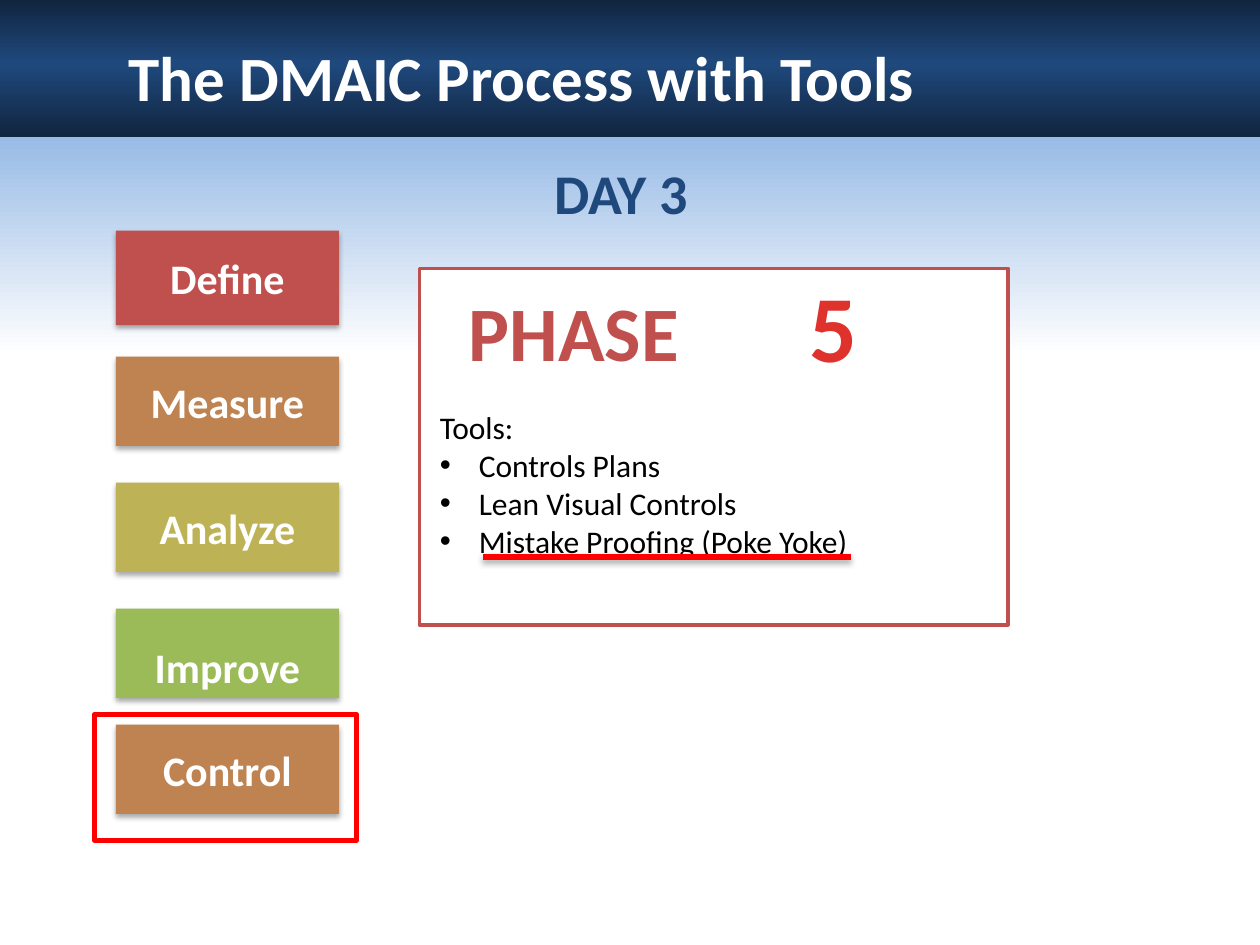
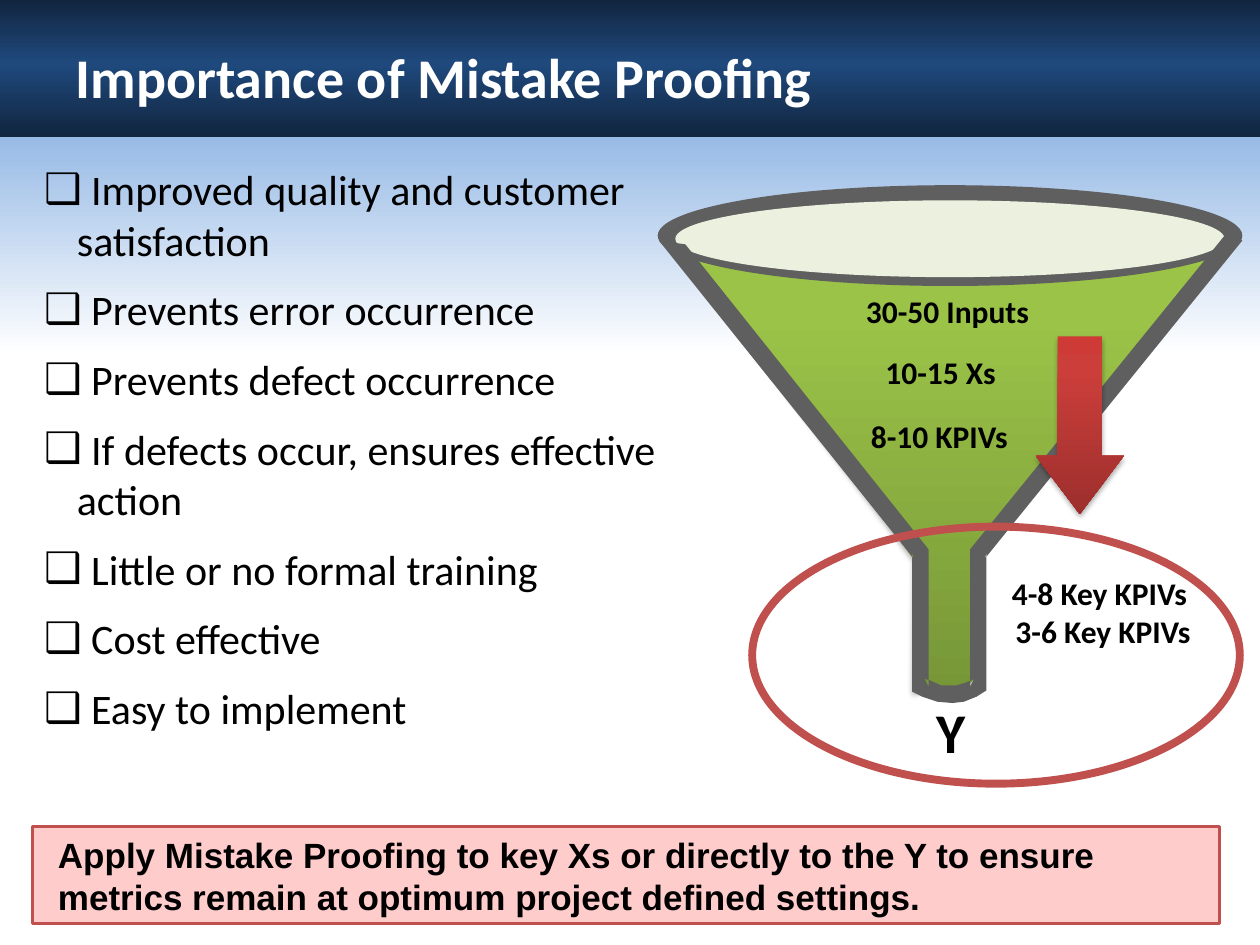
"""Builds two training slides on the DMAIC process and mistake proofing."""
from dataclasses import dataclass

from lxml import etree
from pptx import Presentation
from pptx.dml.color import RGBColor
from pptx.enum.shapes import MSO_CONNECTOR, MSO_SHAPE
from pptx.enum.text import MSO_ANCHOR, MSO_AUTO_SIZE, PP_ALIGN
from pptx.oxml.ns import qn
from pptx.util import Pt

PX = 9144
RECTANGLE, OVAL, DOWN_ARROW = MSO_SHAPE.RECTANGLE, MSO_SHAPE.OVAL, MSO_SHAPE.DOWN_ARROW
STRAIGHT = MSO_CONNECTOR.STRAIGHT
TOP, MIDDLE, BOTTOM = MSO_ANCHOR.TOP, MSO_ANCHOR.MIDDLE, MSO_ANCHOR.BOTTOM
LEFT, CENTER = PP_ALIGN.LEFT, PP_ALIGN.CENTER
NO_FIT = MSO_AUTO_SIZE.NONE
TITLE_AND_CONTENT = 1


@dataclass(frozen=True)
class Theme:
    font: str = "Calibri"
    callout_font: str = "Arial"
    white: str = "FFFFFF"
    black: str = "000000"
    navy: str = "1F497D"
    brick: str = "C0504D"
    bronze: str = "BE8351"
    olive: str = "BDB255"
    green: str = "9BBB59"
    marker: str = "FF0000"
    phase_number: str = "E0322D"
    callout: str = "FFCCCC"
    funnel_wall: str = "5F5F5F"
    funnel_mouth: str = "EBF1DE"
    sky: tuple = ((0, "8EB4E3"), (29, "FFFFFF"), (100, "FFFFFF"))
    band: tuple = ((0, "11253F"), (46, "1F497D"), (100, "11253F"))
    funnel: tuple = ((0, "9DC746"), (20, "9BC348"), (100, "779737"))
    arrow: tuple = ((0, "CE3B37"), (20, "CB3E3A"), (100, "9C2F2D"))
    title: int = 36
    heading: int = 32
    step: int = 24
    statement: int = 20
    label: int = 18
    phase: int = 44
    number: int = 54


class Painter:
    def __init__(self, deck, theme):
        self.deck = deck
        self.theme = theme
        self.page = None

    def new_page(self):
        layout = self.deck.slide_layouts[TITLE_AND_CONTENT]
        self.page = self.deck.slides.add_slide(layout)
        self.shape(RECTANGLE, (0, 92, 1000, 654), fill=self.theme.sky)
        self.shape(RECTANGLE, (0, 0, 1000, 109), fill=self.theme.band)

    def paint(self, shape, fill=None, line=None, width=1, shadow=False):
        if isinstance(fill, tuple):
            shape.fill.gradient()
            shape.fill.gradient_angle = 270
            stops = shape.element.spPr.find(qn("a:gradFill")).find(qn("a:gsLst"))
            for stop in list(stops):
                stops.remove(stop)
            for percent, color in fill:
                stop = etree.SubElement(stops, qn("a:gs"), pos=str(percent * 1000))
                etree.SubElement(stop, qn("a:srgbClr"), val=color)
        elif fill:
            shape.fill.solid()
            shape.fill.fore_color.rgb = RGBColor.from_string(fill)
        else:
            shape.fill.background()
        if line:
            self.stroke(shape, line, width)
        else:
            shape.line.fill.background()
        shape.shadow.inherit = False
        if shadow:
            self.drop_shadow(shape.element.spPr.find(qn("a:effectLst")))
        return shape

    def stroke(self, shape, color, width):
        shape.line.color.rgb = RGBColor.from_string(color)
        shape.line.width = Pt(width)

    def drop_shadow(self, effects):
        shadow = etree.SubElement(effects, qn("a:outerShdw"), blurRad="40000",
                                  dist="23000", dir="5400000", rotWithShape="0")
        color = etree.SubElement(shadow, qn("a:srgbClr"), val=self.theme.black)
        etree.SubElement(color, qn("a:alpha"), val="35000")

    def shape(self, kind, box, **style):
        shape = self.page.shapes.add_shape(kind, *(value * PX for value in box))
        return self.paint(shape, **style)

    def outline(self, points, **style):
        builder = self.page.shapes.build_freeform(*points[0], scale=PX)
        builder.add_line_segments(points[1:], close=True)
        return self.paint(builder.convert_to_shape(), **style)

    def line(self, start, end, color, width):
        ends = (value * PX for value in (*start, *end))
        connector = self.page.shapes.add_connector(STRAIGHT, *ends)
        self.stroke(connector, color, width)
        self.drop_shadow(etree.SubElement(connector.element.spPr, qn("a:effectLst")))

    def letter(self, shape, text, size, color, bold=True, align=CENTER, anchor=TOP,
               font=None, insets=(10, 5, 10, 5)):
        frame = shape.text_frame
        frame.text = text
        frame.word_wrap = True
        frame.auto_size = NO_FIT
        frame.vertical_anchor = anchor
        (frame.margin_left, frame.margin_top,
         frame.margin_right, frame.margin_bottom) = (value * PX for value in insets)
        for para in frame.paragraphs:
            para.alignment = align
            for span in para.runs:
                span.font.name = font or self.theme.font
                span.font.size = Pt(size)
                span.font.bold = bold
                span.font.color.rgb = RGBColor.from_string(color)
        return frame

    def label(self, text, box, size, color=None, align=CENTER):
        shape = self.page.shapes.add_textbox(*(value * PX for value in box))
        self.letter(shape, text, size, color or self.theme.black, align=align)

    def place(self, holder, box):
        holder.left, holder.top, holder.width, holder.height = (v * PX for v in box)
        self.page.shapes.element.append(holder.element)
        return holder

    def title(self, text, box, size):
        holder = self.place(self.page.shapes.title, box)
        self.letter(holder, text, size, self.theme.white, align=LEFT, anchor=BOTTOM)

    def bullets(self, items, box, size, mark, indent, gap=0, lead=None):
        holder = self.place(self.page.placeholders[1], box)
        lines = ([lead] if lead else []) + items
        frame = self.letter(holder, "\n".join(lines), size, self.theme.black,
                            bold=False, align=LEFT)
        for index, para in enumerate(frame.paragraphs):
            para.space_before = Pt(gap)
            bulleted = index > 0 or not lead
            step = indent * PX if bulleted else 0
            properties = para._p.get_or_add_pPr()
            properties.set("marL", str(step))
            properties.set("indent", str(-step))
            if bulleted:
                etree.SubElement(properties, qn("a:buChar"), char=mark)
            else:
                etree.SubElement(properties, qn("a:buNone"))


def draw_process(painter):
    theme = painter.theme
    painter.new_page()
    steps = [
        ("Define", 183, 75, theme.brick, 0),
        ("Measure", 283, 71, theme.bronze, 0),
        ("Analyze", 383, 71, theme.olive, 0),
        ("Improve", 483, 71, theme.green, 11),
        ("Control", 575, 71, theme.bronze, 0),
    ]
    for name, top, height, color, drop in steps:
        step = painter.shape(RECTANGLE, (92, top, 177, height), fill=color, shadow=True)
        painter.letter(step, name, theme.step, theme.white, anchor=MIDDLE,
                       insets=(23, 13 + drop, 23, 13 - drop))

    painter.shape(RECTANGLE, (333, 213, 467, 283), fill=theme.white,
                  line=theme.brick, width=2)
    painter.label("5", (630, 208, 63, 101), theme.number, theme.phase_number)
    painter.label("PHASE", (339, 221, 233, 84), theme.phase, theme.brick)
    painter.bullets(["Controls Plans", "Lean Visual Controls",
                     "Mistake Proofing (Poke Yoke)"],
                    (339, 319, 452, 222), theme.label, "•", 31, lead="Tools:")
    painter.title("The DMAIC Process with Tools", (92, 25, 850, 71), theme.title)
    painter.label("DAY 3", (430, 121, 147, 64), theme.heading, theme.navy, LEFT)
    painter.shape(RECTANGLE, (75, 567, 208, 100), line=theme.marker, width=3)
    painter.line((383, 442), (675, 442), theme.marker, 3)


def draw_funnel(painter):
    theme = painter.theme
    body = [(570, 183), (538, 198), (725, 443), (724, 549), (737, 545), (762, 549),
            (773, 539), (777, 429), (962, 207), (965, 195), (938, 174)]
    wall = [(523, 191), (725, 443), (724, 438), (724, 549), (732, 553), (744, 557),
            (756, 558), (765, 557), (775, 553), (783, 548), (783, 438), (782, 443),
            (986, 191), (976, 182), (770, 436), (770, 545), (773, 539), (766, 542),
            (759, 544), (747, 544), (738, 540), (734, 539), (737, 545), (737, 436),
            (544, 194)]
    painter.outline(body, fill=theme.funnel, shadow=True)
    painter.shape(OVAL, (522, 147, 464, 80), fill=theme.funnel_wall)
    painter.shape(OVAL, (536, 159, 436, 61), fill=theme.funnel_mouth)
    painter.outline(wall, fill=theme.funnel_wall)
    labels = [
        ("30-50 Inputs", (600, 227, 304, 40), theme.label),
        ("10-15 Xs", (642, 275, 209, 40), theme.label),
        ("8-10 KPIVs", (654, 326, 183, 40), theme.label),
        ("4-8 Key KPIVs \n3-6 Key KPIVs", (752, 451, 247, 70), theme.label),
        ("Y", (725, 549, 59, 64), theme.heading),
    ]
    for text, box, size in labels:
        painter.label(text, box, size)
    painter.shape(OVAL, (597, 418, 387, 204), line=theme.brick, width=4.5)
    arrow = painter.shape(DOWN_ARROW, (822, 267, 70, 141), fill=theme.arrow, shadow=True)
    arrow.adjustments[1] = 0.66


def draw_importance(painter):
    theme = painter.theme
    painter.new_page()
    painter.title("Importance of Mistake Proofing", (50, 28, 900, 64), theme.heading)
    painter.bullets([" Improved quality and customer satisfaction",
                     " Prevents error occurrence",
                     " Prevents defect occurrence",
                     " If defects occur, ensures effective action",
                     " Little or no formal training",
                     " Cost effective",
                     " Easy to implement"],
                    (25, 125, 592, 488), theme.step, "❑", 26, gap=11)
    callout = painter.shape(RECTANGLE, (26, 656, 942, 77), fill=theme.callout,
                            line=theme.brick, width=1.5)
    painter.letter(callout,
                   "Apply Mistake Proofing to key Xs or directly to the Y to ensure\n"
                   "metrics remain at optimum project defined settings.",
                   theme.statement, theme.black, align=LEFT, anchor=MIDDLE,
                   font=theme.callout_font, insets=(20, 5, 5, 5))
    draw_funnel(painter)


def main():
    deck = Presentation()
    deck.slide_width, deck.slide_height = 1000 * PX, 750 * PX
    painter = Painter(deck, Theme())
    draw_process(painter)
    draw_importance(painter)
    deck.save("out.pptx")


if __name__ == "__main__":
    main()
